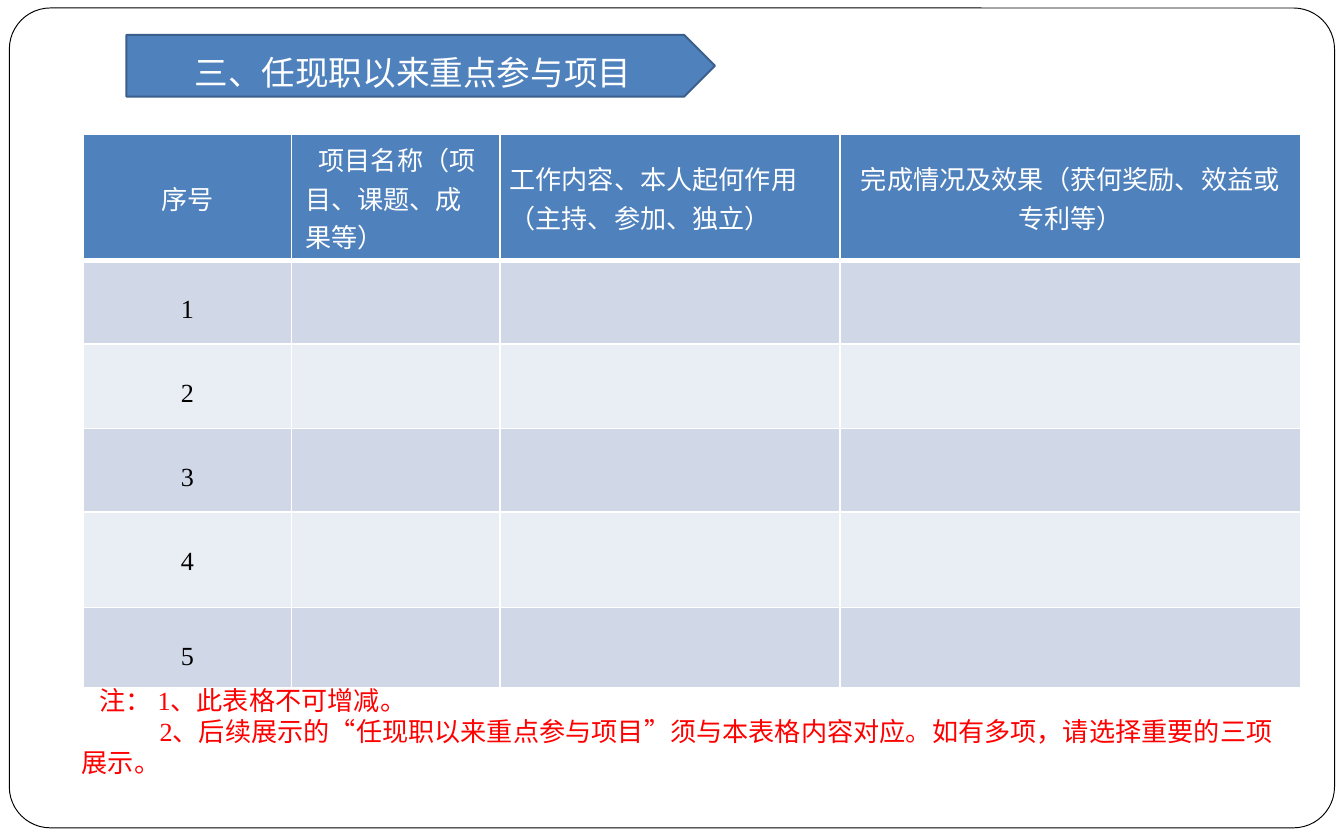
import lxml.etree
import pptx
import pptx.dml.color
import pptx.enum.shapes
import pptx.enum.text
import pptx.oxml
import pptx.oxml.ns
import pptx.util

Inches = pptx.util.Inches
Pt = pptx.util.Pt
RGBColor = pptx.dml.color.RGBColor
Align = pptx.enum.text.PP_ALIGN
Anchor = pptx.enum.text.MSO_ANCHOR
qn = pptx.oxml.ns.qn

WHITE = RGBColor(0xFF, 0xFF, 0xFF)
BLACK = RGBColor(0x00, 0x00, 0x00)
RED = RGBColor(0xFF, 0x00, 0x00)
BLUE = RGBColor(0x4F, 0x81, 0xBD)
DARK_BLUE = RGBColor(0x3A, 0x5F, 0x8C)
BAND_DARK = RGBColor(0xD0, 0xD8, 0xE8)
BAND_LIGHT = RGBColor(0xE9, 0xED, 0xF4)

SERIF = "Times New Roman"
SANS = "Noto Sans CJK SC"

COLUMN_WIDTHS = [1.55, 1.55, 2.53, 3.43]
ROW_HEIGHTS = [0.94, 0.62, 0.63, 0.62, 0.71, 0.6]
# Heading text, alignment, first-line indent, side inset
HEADINGS = [
    ("序号", Align.CENTER, 0, 0.1),
    ("项目名称（项目、课题、成果等）", Align.LEFT, 0.1, 0.1),
    ("工作内容、本人起何作用（主持、参加、独立）", Align.LEFT, 0, 0.07),
    ("完成情况及效果（获何奖励、效益或专利等）", Align.CENTER, 0, 0.07),
]
# Note text, first-line indent
NOTES = [
    ("注： 1、此表格不可增减。", 0.13),
    ("2、后续展示的“任现职以来重点参与项目”须与本表格内容对应。"
     "如有多项，请选择重要的三项展示。", 0.58),
]


def write_text(para, text, size=14, font=SERIF, color=BLACK,
               align=Align.LEFT, indent=0):
    """Put one formatted span of text in a paragraph."""
    para.alignment = align
    para.space_before = Pt(0)
    properties = para._p.get_or_add_pPr()
    properties.set("marL", "0")
    properties.set("indent", str(Inches(indent)))
    span = para.add_run()
    span.text = text
    span.font.size = Pt(size)
    span.font.name = font
    span.font.bold = False
    span.font.color.rgb = color
    if font == SANS:
        east_asian = lxml.etree.SubElement(span._r.get_or_add_rPr(), qn("a:ea"))
        east_asian.set("typeface", font)


def paint(shape, fill, line, width):
    shape.fill.solid()
    shape.fill.fore_color.rgb = fill
    shape.line.color.rgb = line
    shape.line.width = Pt(width)
    shape.shadow.inherit = False


def set_borders(cell, top, bottom):
    """Draw white borders round a cell; widths in points."""
    properties = cell._tc.get_or_add_tcPr()
    sides = [("lnL", 1), ("lnR", 1), ("lnT", top), ("lnB", bottom)]
    for position, (side, width) in enumerate(sides):
        border = pptx.oxml.parse_xml(
            f'<a:{side} {pptx.oxml.ns.nsdecls("a")} w="{Pt(width)}"><a:solidFill>'
            f'<a:srgbClr val="{WHITE}"/></a:solidFill></a:{side}>')
        properties.insert(position, border)


def add_banner(page, text):
    """Shape the body placeholder as an arrow-ended heading."""
    banner = page.placeholders[1]
    banner.left, banner.top = Inches(0.94), Inches(0.26)
    banner.width, banner.height = Inches(4.38), Inches(0.46)
    geometry = lxml.etree.SubElement(banner._element.spPr, qn("a:prstGeom"))
    geometry.set("prst", "homePlate")
    lxml.etree.SubElement(geometry, qn("a:avLst"))
    paint(banner, BLUE, DARK_BLUE, 1)
    frame = banner.text_frame
    frame.vertical_anchor = Anchor.MIDDLE
    frame.margin_top, frame.margin_bottom = Inches(0.1), 0
    write_text(frame.paragraphs[0], text, size=18, color=WHITE, align=Align.CENTER)
    return banner


def add_border_frame(page, banner):
    """Rounded page outline, placed behind the banner."""
    outline = page.shapes.add_shape(
        pptx.enum.shapes.MSO_SHAPE.ROUNDED_RECTANGLE,
        Inches(0.07), Inches(0.06), Inches(9.86), Inches(6.1))
    outline.adjustments[0] = 0.05
    paint(outline, WHITE, BLACK, 0.5)
    banner._element.addprevious(outline._element)


def add_project_table(page):
    table = page.shapes.add_table(
        len(ROW_HEIGHTS), len(COLUMN_WIDTHS), Inches(0.62), Inches(1),
        Inches(sum(COLUMN_WIDTHS)), Inches(sum(ROW_HEIGHTS))).table
    for column, width in zip(table.columns, COLUMN_WIDTHS):
        column.width = Inches(width)

    # Bands and borders
    for number, height in enumerate(ROW_HEIGHTS):
        row = table.rows[number]
        row.height = Inches(height)
        band = BAND_DARK if number % 2 else BAND_LIGHT
        for cell in row.cells:
            cell.fill.solid()
            cell.fill.fore_color.rgb = band if number else BLUE
            set_borders(cell, top=3 if number == 1 else 1,
                        bottom=1 if number else 3)

    # Heading row
    for cell, (text, align, indent, inset) in zip(table.rows[0].cells, HEADINGS):
        cell.vertical_anchor = Anchor.MIDDLE
        cell.margin_left = cell.margin_right = Inches(inset)
        cell.margin_top = cell.margin_bottom = Inches(0.04)
        write_text(cell.text_frame.paragraphs[0], text, font=SANS, color=WHITE,
                   align=align, indent=indent)

    # Row numbers
    for number in range(1, len(ROW_HEIGHTS)):
        cell = table.cell(number, 0)
        cell.margin_top = Inches(0.26)
        write_text(cell.text_frame.paragraphs[0], str(number), align=Align.CENTER)


def add_notes_box(page):
    box = page.shapes.add_textbox(Inches(0.51), Inches(5.04),
                                  Inches(9.19), Inches(0.85))
    frame = box.text_frame
    frame.word_wrap = True
    for number, (text, indent) in enumerate(NOTES):
        para = frame.add_paragraph() if number else frame.paragraphs[0]
        write_text(para, text, color=RED, indent=indent)


def main():
    deck = pptx.Presentation()
    deck.slide_width, deck.slide_height = Inches(10), Inches(6.25)
    # The section layout holds a plain text body placeholder
    page = deck.slides.add_slide(deck.slide_layouts[2])
    unused_title = page.shapes.title._element
    unused_title.getparent().remove(unused_title)

    banner = add_banner(page, "三、任现职以来重点参与项目")
    add_border_frame(page, banner)
    add_project_table(page)
    add_notes_box(page)
    deck.save("out.pptx")


if __name__ == "__main__":
    main()
